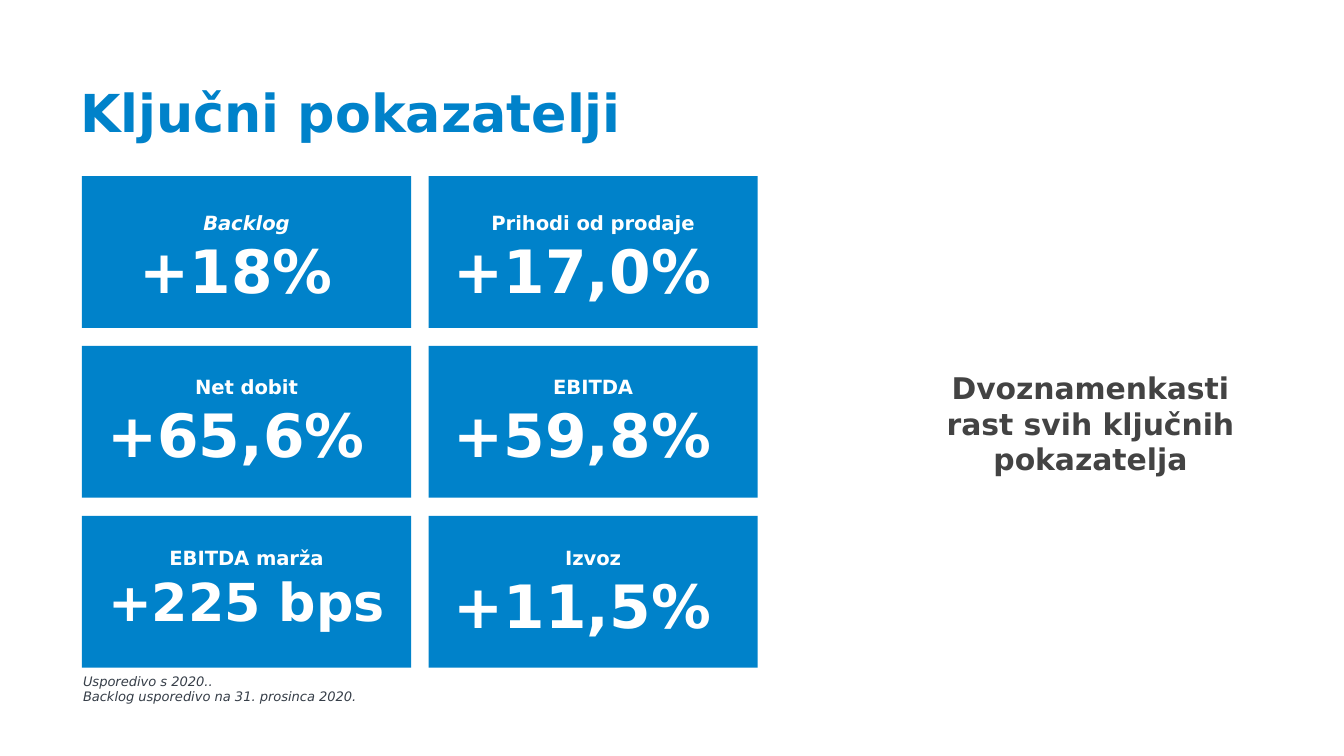
from dataclasses import dataclass

from pptx import Presentation
from pptx.dml.color import RGBColor as Rgb
from pptx.enum.shapes import MSO_SHAPE as Shape
from pptx.enum.text import MSO_ANCHOR as Anchor, MSO_AUTO_SIZE as Fit, PP_ALIGN as Align
from pptx.util import Cm, Pt


@dataclass(frozen=True)
class Theme:
    font: str = "DejaVu Sans"
    blue: str = "0082CA"
    white: str = "FFFFFF"
    grey: str = "434343"
    slate: str = "363E48"
    head: float = 28
    claim: float = 16
    note: float = 7
    label: float = 10.5
    value: float = 32
    unit: float = 28


THEME = Theme()

# Card grid in centimetres
LEFT, TOP = 1.55, 3.33
WIDE, HIGH = 6.22, 2.87
STEP_X, STEP_Y = 6.55, 3.21
TEXT_WIDE = 5.8
TEXT_TOPS = (3.86, 6.96, 10.19)

# Label, value, value size, italic label; one list per row
CARDS = (
    (("Backlog", "+18% ", THEME.value, True),
     ("Prihodi od prodaje", "+17,0% ", THEME.value, False)),
    (("Net dobit", "+65,6% ", THEME.value, False),
     ("EBITDA", "+59,8% ", THEME.value, False)),
    (("EBITDA marža", "+225 bps", THEME.unit, False),
     ("Izvoz", "+11,5% ", THEME.value, False)),
)


def add_run(para, text, size, color, bold=False, italic=False):
    run = para.add_run()
    run.text = text
    font = run.font
    font.name, font.size = THEME.font, Pt(size)
    font.bold, font.italic = bold, italic
    font.color.rgb = Rgb.from_string(color)


def add_text(slide, box, lines, align=Align.LEFT, wrap=True):
    """Add a text box; each line is (text, size, color, bold, italic)."""
    frame = slide.shapes.add_textbox(*map(Cm, box)).text_frame
    frame.word_wrap = wrap
    frame.auto_size = Fit.SHAPE_TO_FIT_TEXT
    for i, line in enumerate(lines):
        para = frame.add_paragraph() if i else frame.paragraphs[0]
        para.alignment = align
        add_run(para, *line)


def add_title(slide, text):
    title = slide.shapes.title
    title.left, title.top, title.width, title.height = map(Cm, (1.27, 1.27, 14.55, 3.07))
    frame = title.text_frame
    frame.margin_left = frame.margin_right = Cm(0.25)
    frame.margin_top = frame.margin_bottom = Cm(0.25)
    frame.vertical_anchor = Anchor.TOP
    frame.auto_size = Fit.NONE
    para = frame.paragraphs[0]
    para.alignment = Align.LEFT
    add_run(para, text, THEME.head, THEME.blue, True)


def add_card(slide, row, col, label, value, size, italic):
    left = LEFT + col * STEP_X
    box = (left, TOP + row * STEP_Y, WIDE, HIGH)
    card = slide.shapes.add_shape(Shape.RECTANGLE, *map(Cm, box))
    card.shadow.inherit = False
    card.fill.solid()
    card.fill.fore_color.rgb = Rgb.from_string(THEME.blue)
    card.line.fill.background()
    high = 2.08 if size == THEME.value else 1.9
    text_box = (left + (WIDE - TEXT_WIDE) / 2, TEXT_TOPS[row], TEXT_WIDE, high)
    lines = ((label, THEME.label, THEME.white, True, italic),
             (value, size, THEME.white, True, False))
    add_text(slide, text_box, lines, Align.CENTER, wrap=False)


def main():
    deck = Presentation()
    deck.slide_width, deck.slide_height = Cm(25.4), Cm(14.29)
    slide = deck.slides.add_slide(deck.slide_layouts[5])

    # Heading
    add_title(slide, "Ključni pokazatelji")

    # Indicator cards
    for row, cards in enumerate(CARDS):
        for col, card in enumerate(cards):
            add_card(slide, row, col, *card)

    # Key message
    claim = "Dvoznamenkasti rast svih ključnih pokazatelja"
    add_text(slide, (17.12, 6.86, 6.98, 2.31),
             [(claim, THEME.claim, THEME.grey, True, False)], Align.CENTER)

    # Footnote
    notes = ("Usporedivo s 2020..", "Backlog usporedivo na 31. prosinca 2020.")
    add_text(slide, (1.32, 12.6, 6.2, 0.86),
             [(note, THEME.note, THEME.slate, False, True) for note in notes])

    deck.save("out.pptx")


if __name__ == "__main__":
    main()
